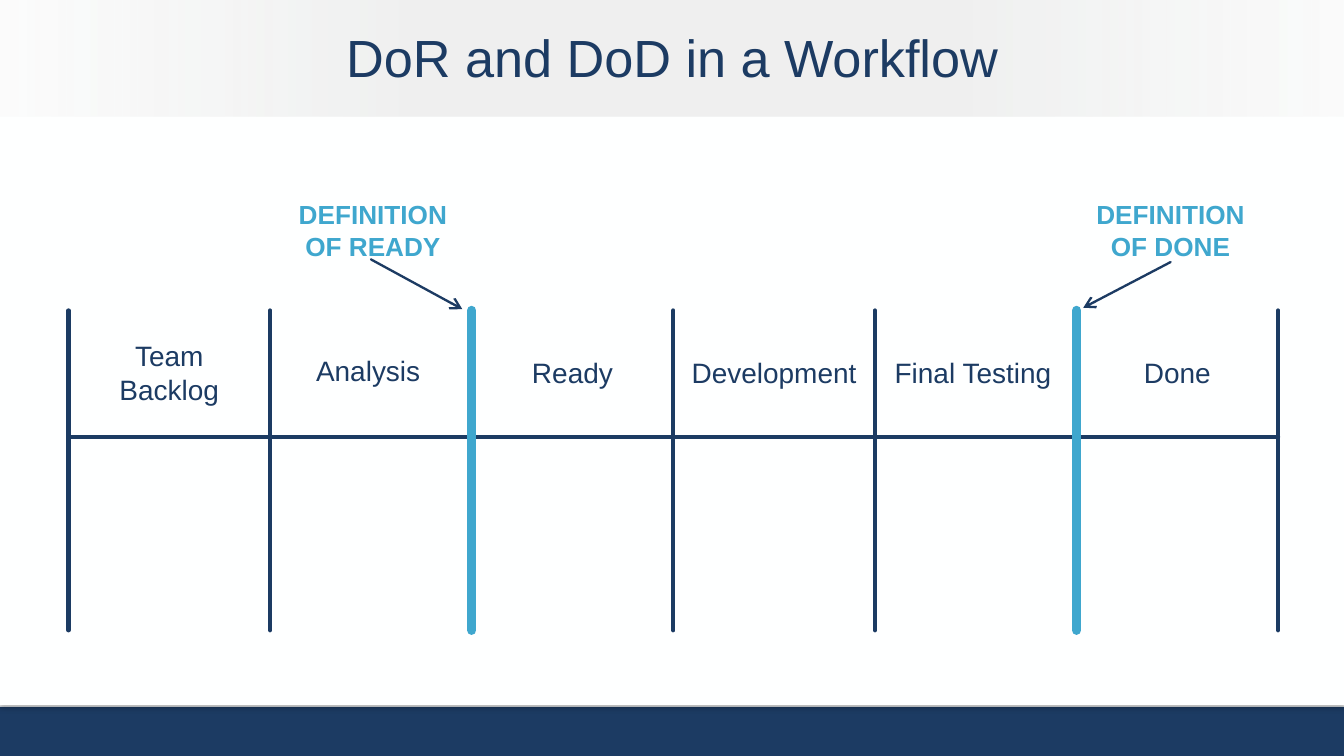
from lxml.etree import SubElement
from pptx import Presentation
from pptx.dml.color import RGBColor
from pptx.enum.shapes import MSO_CONNECTOR, MSO_SHAPE
from pptx.enum.text import MSO_ANCHOR, PP_ALIGN
from pptx.oxml.ns import qn
from pptx.util import Inches, Pt

NAVY, BLUE, WHITE, GREY = "1C3B63", "3FA7CE", "FEFFFF", "C4C5C4"

TITLE = "DoR and DoD in a Workflow"
# column heading, top and width of its text
COLUMNS = [
    ("Team Backlog", 2.47, 1.5),
    ("Analysis", 2.58, 1.46),
    ("Ready", 2.6, 1.5),
    ("Development", 2.6, 1.5),
    ("Final Testing", 2.6, 1.46),
    ("Done", 2.6, 1.5),
]
GATES = {2, 5}  # columns whose left border is a gate
# lines of text, left, width, arrow start, arrow end
DEFINITIONS = [
    (["DEFINITION", "OF READY"], 1.99, 1.57, (2.76, 1.93), (3.44, 2.3)),
    (["DEFINITION", "OF DONE"], 7.96, 1.5, (8.71, 1.95), (8.06, 2.29)),
]
HEADER_STOPS = [(0, 6), (29, 25), (69, 25), (99, 5)]  # position %, opacity %

BOARD_LEFT, BOARD_TOP, BOARD_BOTTOM, HEADING_LINE = 0.51, 2.31, 4.69, 3.25
COLUMN_WIDTH = 1.5


def rgb(color):
    return RGBColor.from_string(color)


def add_color(parent, color, opacity):
    value = SubElement(parent, qn("a:srgbClr"), val=color)
    SubElement(value, qn("a:alpha"), val=str(opacity * 1000))


def add_band(top, height, color):
    band = slide.shapes.add_shape(
        MSO_SHAPE.RECTANGLE, 0, Inches(top), Inches(10), Inches(height))
    band.shadow.inherit = False
    band.fill.solid()
    band.fill.fore_color.rgb = rgb(color)
    band.line.fill.background()
    return band


def add_drop_shadow(shape):
    effects = shape._element.spPr.find(qn("a:effectLst"))
    shadow = SubElement(effects, qn("a:outerShdw"), blurRad=str(Pt(3.1)),
                        dist=str(Pt(1.8)), dir="5400000", rotWithShape="0")
    add_color(shadow, "000000", 35)


def fade_sides(shape):
    shape.fill.gradient()
    shape.fill.gradient_angle = 180
    stops = shape._element.spPr.find(qn("a:gradFill")).find(qn("a:gsLst"))
    stops.clear()
    for position, opacity in HEADER_STOPS:
        stop = SubElement(stops, qn("a:gs"), pos=str(position * 1000))
        add_color(stop, GREY, opacity)


def add_text(lines, left, top, width, height, size, color=NAVY, bold=False,
             anchor=MSO_ANCHOR.TOP):
    box = slide.shapes.add_textbox(
        Inches(left), Inches(top), Inches(width), Inches(height))
    frame = box.text_frame
    frame.word_wrap = True
    frame.vertical_anchor = anchor
    for index, line in enumerate(lines):
        paragraph = frame.add_paragraph() if index else frame.paragraphs[0]
        paragraph.alignment = PP_ALIGN.CENTER
        run = paragraph.add_run()
        run.text = line
        run.font.name = "Arial"
        run.font.size = Pt(size)
        run.font.bold = bold
        run.font.color.rgb = rgb(color)


def add_line(start, end, color, width, arrow=False):
    line = slide.shapes.add_connector(
        MSO_CONNECTOR.STRAIGHT, *(Inches(value) for value in start + end))
    line.line.color.rgb = rgb(color)
    line.line.width = Pt(width)
    outline = line.line._get_or_add_ln()
    outline.set("cap", "rnd")
    SubElement(outline, qn("a:round"))
    if arrow:
        SubElement(outline, qn("a:tailEnd"), type="arrow")
    SubElement(line._element.spPr, qn("a:effectLst"))


prs = Presentation()
prs.slide_width = Inches(10)
prs.slide_height = prs.slide_width * 9 // 16
slide = prs.slides.add_slide(prs.slide_layouts[6])
slide.background.fill.solid()
slide.background.fill.fore_color.rgb = rgb(WHITE)

add_band(5.26, 0.37, NAVY)
page = add_band(0, 5.24, WHITE)
page.line.color.rgb = rgb(WHITE)
page.line.width = Pt(0.75)
add_drop_shadow(page)
fade_sides(add_band(0, 0.87, GREY))
add_text([TITLE], 0, 0.16, 10, 0.52, 28, anchor=MSO_ANCHOR.MIDDLE)

borders = [BOARD_LEFT + i * COLUMN_WIDTH for i in range(len(COLUMNS) + 1)]
for (heading, top, width), left in zip(COLUMNS, borders):
    add_text([heading], left, top, width, 0.64, 15)

add_line((borders[0], HEADING_LINE), (borders[-1], HEADING_LINE), NAVY, 2.25)
# Gates are drawn last so that they cover the heading line
for index in sorted(range(len(borders)), key=lambda i: i in GATES):
    color, width = (BLUE, 5) if index in GATES else (NAVY, 2.25)
    x = borders[index]
    add_line((x, BOARD_TOP), (x, BOARD_BOTTOM), color, width)

for lines, left, width, start, end in DEFINITIONS:
    add_text(lines, left, 1.43, width, 0.52, 14, BLUE, bold=True)
    add_line(start, end, NAVY, 1.25, arrow=True)

prs.save("out.pptx")
